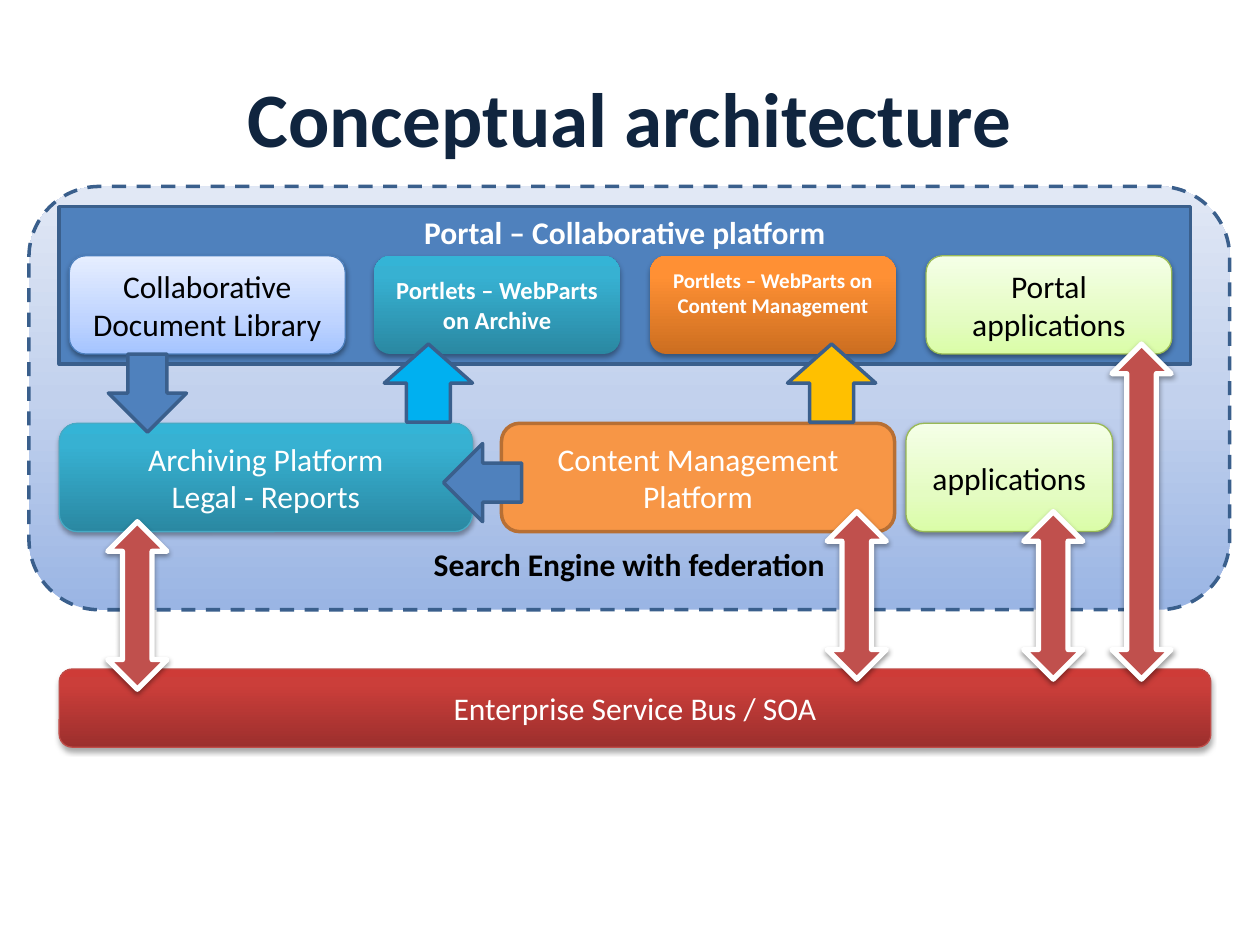
"""Build the conceptual architecture slide."""
from dataclasses import dataclass

from lxml import etree
from pptx import Presentation
from pptx.dml.color import RGBColor
from pptx.enum.dml import MSO_LINE
from pptx.enum.shapes import MSO_SHAPE
from pptx.enum.text import MSO_ANCHOR, PP_ALIGN
from pptx.oxml.ns import qn
from pptx.util import Inches, Pt

RECT, ROUND = MSO_SHAPE.RECTANGLE, MSO_SHAPE.ROUNDED_RECTANGLE
RIGHT, DOWN, BOTH = MSO_SHAPE.RIGHT_ARROW, MSO_SHAPE.DOWN_ARROW, MSO_SHAPE.LEFT_RIGHT_ARROW
TOP, MIDDLE, BOTTOM = MSO_ANCHOR.TOP, MSO_ANCHOR.MIDDLE, MSO_ANCHOR.BOTTOM
CENTER, DASH = PP_ALIGN.CENTER, MSO_LINE.DASH


@dataclass(frozen=True)
class Theme:
    """Colours, type sizes and effects of the slide."""

    font: str = "Calibri"
    head: int = 44
    body: int = 18
    small: int = 14
    tiny: int = 12
    white: str = "FFFFFF"
    black: str = "000000"
    navy: str = "10253F"
    blue: str = "4F81BD"
    edge: str = "3A5F8C"
    orange: str = "F79646"
    rust: str = "B76F34"
    sky: str = "00B0F0"
    gold: str = "FFC000"
    red: str = "C0504D"
    zone: tuple = ((0, "9AB5E4"), (50, "C2D1ED"), (100, "E1E8F5"))
    ice: tuple = ((0, "A4C4FF"), (35, "BFD4FF"), (100, "E6EEFF"))
    teal: tuple = ((0, "2A88A2"), (80, "37B1D2"), (100, "34B4D6"))
    amber: tuple = ((0, "CC6E20"), (80, "FF9034"), (100, "FF9136"))
    lime: tuple = ((0, "DAFDA7"), (35, "E4FCC2"), (100, "F5FFE7"))
    brick: tuple = ((0, "9C2F2D"), (80, "CB3E3A"), (100, "CE3B37"))
    ice_edge: str = "4B7EBC"
    teal_edge: str = "46AAC5"
    lime_edge: str = "98B955"
    brick_edge: str = "BF4C48"
    soft: tuple = (38, 1.6)
    deep: tuple = (35, 1.8)
    blur: float = 3.1


def apply(target, values):
    """Set each named attribute on the target."""
    for name, value in values.items():
        setattr(target, name, value)


class Board:
    """Draw styled elements on one slide."""

    def __init__(self, slide, theme):
        """Keep the slide and its theme."""
        self.slide, self.theme = slide, theme

    def paint(self, shape, fill):
        """Fill with one colour or with gradient stops from the bottom up."""
        if isinstance(fill, str):
            shape.fill.solid()
            shape.fill.fore_color.rgb = RGBColor.from_string(fill)
            return
        shape.fill.gradient()
        shape.fill.gradient_angle = 90
        stops = shape._element.spPr.find(".//" + qn("a:gsLst"))
        stops[:] = []
        for place, color in fill:
            stop = etree.SubElement(stops, qn("a:gs"), pos=str(place * 1000))
            etree.SubElement(stop, qn("a:srgbClr"), val=color)

    def shade(self, shape, shadow):
        """Replace the style shadow with a given one or none."""
        shape.shadow.inherit = False
        if shadow:
            alpha, dist = shadow
            effects = shape._element.spPr.find(qn("a:effectLst"))
            outer = etree.SubElement(
                effects, qn("a:outerShdw"), blurRad=str(Pt(self.theme.blur)),
                dist=str(Pt(dist)), dir="5400000", rotWithShape="0")
            tint = etree.SubElement(outer, qn("a:srgbClr"), val=self.theme.black)
            etree.SubElement(tint, qn("a:alpha"), val=str(alpha * 1000))

    def label(self, shape, lines, color, size, bold=False, anchor=MIDDLE, foot=0.05):
        """Put centred paragraphs into a shape."""
        frame = shape.text_frame
        apply(frame, {"word_wrap": True, "vertical_anchor": anchor,
                      "margin_bottom": Inches(foot)})
        frame.text = "\n".join(lines)
        for para in frame.paragraphs:
            para.alignment = CENTER
            apply(para.font, {"name": self.theme.font, "size": Pt(size), "bold": bold})
            para.font.color.rgb = RGBColor.from_string(color)

    def shape(self, kind, area, fill, edge=None, width=0.75, shadow=None, turn=0, dash=None):
        """Add a preset shape with fill, outline and shadow."""
        item = self.slide.shapes.add_shape(kind, *map(Inches, area))
        item.rotation = turn
        self.paint(item, fill)
        if edge:
            item.line.color.rgb = RGBColor.from_string(edge)
            apply(item.line, {"width": Pt(width), "dash_style": dash})
        else:
            item.line.fill.background()
        self.shade(item, shadow)
        return item

    def title(self, text, area):
        """Add the slide heading."""
        box = self.slide.shapes.add_textbox(*map(Inches, area))
        self.label(box, [text], self.theme.navy, self.theme.head, True)

    def panel(self, kind, area, fill, text, color, anchor, dash=None):
        """Add a large area with a bold caption."""
        item = self.shape(kind, area, fill, self.theme.edge, 2, dash=dash)
        self.label(item, [text], color, self.theme.body, True, anchor)

    def card(self, area, lines, fill, edge, color, shadow, width=0.75, **text):
        """Add a rounded box with a label."""
        item = self.shape(ROUND, area, fill, edge, width, shadow)
        self.label(item, lines, color, **{"size": self.theme.body, **text})

    def arrow(self, kind, area, fill, turn):
        """Add a flat block arrow."""
        self.shape(kind, area, fill, self.theme.edge, 2, turn=turn)

    def link(self, mid, top, span):
        """Add an upright two-way arrow by its centre, top and length."""
        thick = 0.47
        area = (mid - span / 2, top + (span - thick) / 2, span, thick)
        self.shape(BOTH, area, self.theme.red, self.theme.white, 3, self.theme.soft, 270)


def main():
    """Build and save the slide."""
    deck = Presentation()
    apply(deck, {"slide_width": Inches(10), "slide_height": Inches(7.5)})
    t = Theme()
    board = Board(deck.slides.add_slide(deck.slide_layouts[6]), t)

    board.panel(ROUND, (0.23, 1.48, 9.53, 3.36), t.zone,
                "Search Engine with federation", t.black, BOTTOM, DASH)
    board.title("Conceptual architecture", (0.5, 0.3, 9, 1.25))
    board.panel(RECT, (0.47, 1.64, 8.98, 1.25), t.blue,
                "Portal – Collaborative platform", t.white, TOP)

    def tile(col):
        """Return the area of a portal tile."""
        return 2.97 + col * 2.19, 2.03, 1.95, 0.78

    def block(left, width):
        """Return the area of a platform block."""
        return left, 3.36, width, 0.86

    board.card((0.55, 2.03, 2.19, 0.78), ["Collaborative", "Document Library"],
               t.ice, t.ice_edge, t.black, t.soft)
    board.card(block(3.98, 3.12), ["Content Management", "Platform"],
               t.orange, t.rust, t.white, None, 2)
    board.card(block(0.47, 3.28), ["Archiving Platform", "Legal - Reports"],
               t.teal, t.teal_edge, t.white, t.deep)
    board.card(tile(0), ["Portlets – WebParts on Archive"],
               t.teal, None, t.white, t.deep, size=t.small, bold=True)
    board.card(tile(1), ["Portlets – WebParts on Content Management"],
               t.amber, None, t.white, t.deep, size=t.tiny, bold=True, foot=0.25)
    board.card(tile(2), ["Portal applications"], t.lime, t.lime_edge, t.black, t.soft)
    board.card(block(7.19, 1.64), ["applications"], t.lime, t.lime_edge, t.black, t.soft)

    board.arrow(RIGHT, (0.86, 2.81, 0.62, 0.62), t.blue, 90)
    for left, fill in ((3.05, t.sky), (6.25, t.gold)):
        board.arrow(DOWN, (left, 2.73, 0.7, 0.62), fill, 180)
    board.arrow(RIGHT, (3.52, 3.52, 0.62, 0.62), t.blue, 180)

    board.card((0.47, 5.31, 9.14, 0.62), ["Enterprise Service Bus / SOA"],
               t.brick, t.brick_edge, t.white, t.deep)
    for mid, top, span in ((9.06, 2.73, 2.66), (6.8, 4.06, 1.33),
                           (1.09, 4.14, 1.33), (8.36, 4.06, 1.33)):
        board.link(mid, top, span)
    deck.save("out.pptx")


if __name__ == "__main__":
    main()
